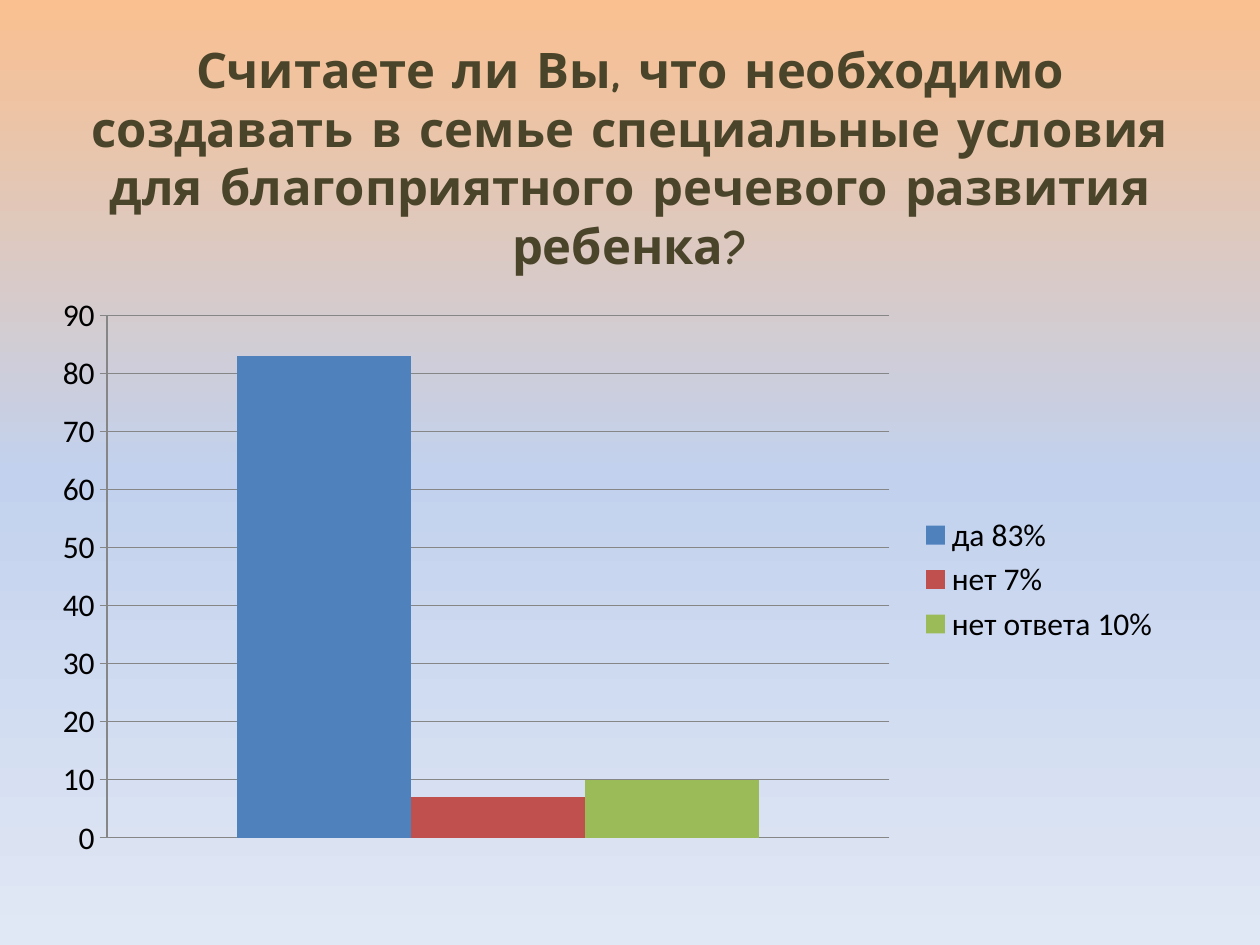
from copy import deepcopy

from lxml.etree import SubElement
from pptx import Presentation
from pptx.chart.data import CategoryChartData
from pptx.dml.color import RGBColor
from pptx.enum.chart import XL_CHART_TYPE, XL_LEGEND_POSITION, XL_TICK_MARK
from pptx.enum.text import MSO_ANCHOR, PP_ALIGN
from pptx.oxml.ns import qn
from pptx.util import Inches, Pt

BACKGROUND_STOPS = [
    (0, RGBColor(0xFA, 0xC0, 0x90)),
    (0.5, RGBColor(0xC2, 0xD1, 0xED)),
    (1, RGBColor(0xE1, 0xE8, 0xF5)),
]
TITLE_COLOR = RGBColor(0x4A, 0x45, 0x2A)
TEXT_COLOR = RGBColor(0, 0, 0)
GRID_COLOR = RGBColor(0x86, 0x86, 0x86)

QUESTION = (
    "Считаете ли Вы, что необходимо создавать в семье специальные условия "
    "для благоприятного речевого развития ребенка?"
)
ANSWERS = [
    ("да 83%", 83, RGBColor(0x4F, 0x81, 0xBD)),
    ("нет 7%", 7, RGBColor(0xC0, 0x50, 0x4D)),
    ("нет ответа 10%", 10, RGBColor(0x9B, 0xBB, 0x59)),
]
# Plot area as fractions of the chart frame
PLOT_LAYOUT = {"x": 0.06, "y": 0.05, "w": 0.69, "h": 0.89}


def set_background(slide):
    fill = slide.background.fill
    fill.gradient()
    fill.gradient_angle = 270
    # A new gradient has two stops; the middle one is added
    stop_list = slide.background._cSld.find(".//" + qn("a:gsLst"))
    stop_list.insert(1, deepcopy(stop_list[0]))
    for stop, (position, color) in zip(fill.gradient_stops, BACKGROUND_STOPS):
        stop.position = position
        stop.color.rgb = color


def set_title(slide):
    title = slide.shapes.title
    title.left, title.top = Inches(0.5), Inches(0.3)
    title.width, title.height = Inches(9), Inches(1.89)
    frame = title.text_frame
    frame.text = QUESTION
    frame.word_wrap = True
    frame.vertical_anchor = MSO_ANCHOR.MIDDLE
    paragraph = frame.paragraphs[0]
    paragraph.alignment = PP_ALIGN.CENTER
    font = paragraph.font
    font.name = "Comic Neue"
    font.size = Pt(28)
    font.bold = True
    font.color.rgb = TITLE_COLOR


def set_plot_layout(chart):
    plot_area = chart._chartSpace.chart.plotArea
    layout = plot_area.find(qn("c:layout"))
    if layout is None:
        layout = SubElement(plot_area, qn("c:layout"))
        plot_area.insert(0, layout)
    manual = SubElement(layout, qn("c:manualLayout"))
    SubElement(manual, qn("c:layoutTarget")).set("val", "inner")
    for side in ("x", "y"):
        SubElement(manual, qn(f"c:{side}Mode")).set("val", "edge")
    for name, value in PLOT_LAYOUT.items():
        SubElement(manual, qn(f"c:{name}")).set("val", str(value))


def format_value_axis(axis):
    axis.minimum_scale, axis.maximum_scale, axis.major_unit = 0, 90, 10
    axis.major_tick_mark = XL_TICK_MARK.OUTSIDE
    axis.has_major_gridlines = True
    for line in (axis.format.line, axis.major_gridlines.format.line):
        line.color.rgb = GRID_COLOR
        line.width = Pt(0.75)


def add_answer_chart(slide):
    data = CategoryChartData()
    data.categories = ["1"]
    for name, value, _ in ANSWERS:
        data.add_series(name, [value])
    chart = slide.shapes.add_chart(
        XL_CHART_TYPE.COLUMN_CLUSTERED,
        Inches(0.31), Inches(2.27), Inches(9), Inches(4.66), data,
    ).chart
    chart.has_title = False
    chart.font.name = "Calibri"
    chart.font.size = Pt(18)
    chart.font.color.rgb = TEXT_COLOR

    # Columns
    plot = chart.plots[0]
    plot.gap_width = 150
    plot.overlap = 0
    plot.vary_by_categories = False
    for series, (_, _, color) in zip(plot.series, ANSWERS):
        series.format.fill.solid()
        series.format.fill.fore_color.rgb = color

    # Axes and legend
    chart.category_axis.visible = False
    format_value_axis(chart.value_axis)
    chart.has_legend = True
    chart.legend.position = XL_LEGEND_POSITION.RIGHT
    chart.legend.include_in_layout = False
    set_plot_layout(chart)


def main():
    presentation = Presentation()
    presentation.slide_width = Inches(10)
    presentation.slide_height = Inches(7.5)
    title_only = presentation.slide_layouts[5]
    slide = presentation.slides.add_slide(title_only)
    set_background(slide)
    set_title(slide)
    add_answer_chart(slide)
    presentation.save("out.pptx")


if __name__ == "__main__":
    main()
